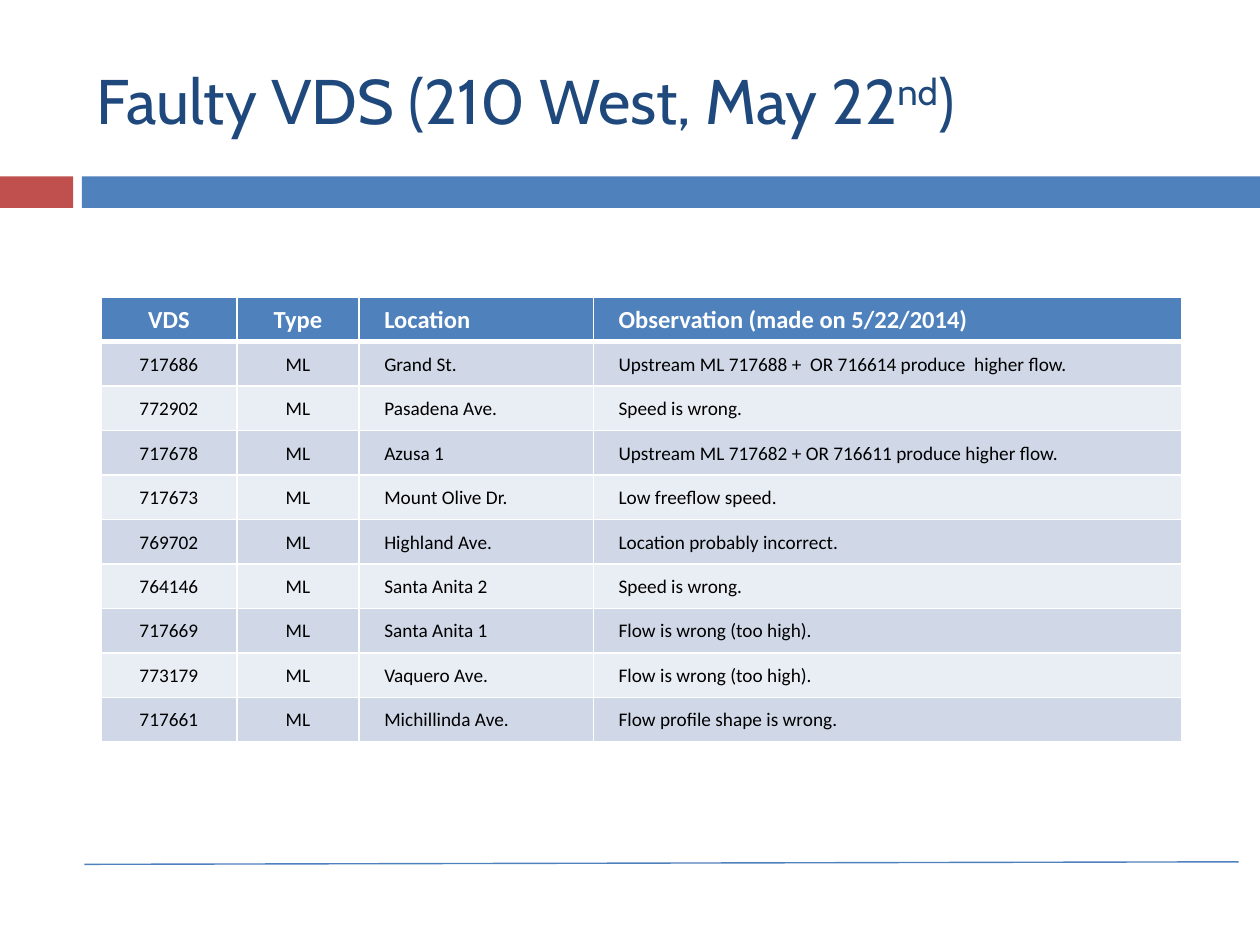
from lxml import etree
from pptx import Presentation
from pptx.dml.color import RGBColor
from pptx.enum.shapes import MSO_CONNECTOR, MSO_SHAPE
from pptx.enum.text import MSO_ANCHOR, PP_ALIGN
from pptx.oxml import parse_xml
from pptx.oxml.ns import qn
from pptx.util import Inches, Pt

RECTANGLE = MSO_SHAPE.RECTANGLE
STRAIGHT = MSO_CONNECTOR.STRAIGHT
MIDDLE = MSO_ANCHOR.MIDDLE
LEFT, CENTER = PP_ALIGN.LEFT, PP_ALIGN.CENTER
NAMESPACE = "http://schemas.openxmlformats.org/drawingml/2006/main"
BLUE, RED, NAVY, WHITE, BLACK = "4F81BD", "C0504D", "1F497D", "FFFFFF", "000000"
BANDS = ["E9EDF4", "D0D8E8"]
COLUMN_WIDTHS = [1.08, 0.97, 1.86, 4.67]
ROWS = [
    ("VDS", "Type", "Location", "Observation (made on 5/22/2014)"),
    ("717686", "ML", "Grand St.", "Upstream ML 717688 +  OR 716614 produce  higher flow."),
    ("772902", "ML", "Pasadena Ave.", "Speed is wrong."),
    ("717678", "ML", "Azusa 1", "Upstream ML 717682 + OR 716611 produce higher flow."),
    ("717673", "ML", "Mount Olive Dr.", "Low freeflow speed."),
    ("769702", "ML", "Highland Ave.", "Location probably incorrect."),
    ("764146", "ML", "Santa Anita 2", "Speed is wrong."),
    ("717669", "ML", "Santa Anita 1", "Flow is wrong (too high)."),
    ("773179", "ML", "Vaquero Ave.", "Flow is wrong (too high)."),
    ("717661", "ML", "Michillinda Ave.", "Flow profile shape is wrong."),
]


def color(value):
    return RGBColor.from_string(value)


def add_borders(cell, widths):
    properties = cell._tc.get_or_add_tcPr()
    for index, (side, points) in enumerate(widths.items()):
        border = parse_xml(
            f'<a:ln{side} xmlns:a="{NAMESPACE}" w="{Pt(points)}">'
            f'<a:solidFill><a:srgbClr val="{WHITE}"/></a:solidFill></a:ln{side}>'
        )
        properties.insert(index, border)


deck = Presentation()
deck.slide_width, deck.slide_height = Inches(10), Inches(7.5)
page = deck.slides.add_slide(deck.slide_layouts[6])

for left, width, fill in [(0, 0.58, RED), (0.65, 9.35, BLUE)]:
    bar = page.shapes.add_shape(RECTANGLE, Inches(left), Inches(1.4), Inches(width), Inches(0.25))
    bar.shadow.inherit = False
    bar.fill.solid()
    bar.fill.fore_color.rgb = color(fill)
    bar.line.fill.background()

footer_line = page.shapes.add_connector(
    STRAIGHT, Inches(0.67), Inches(6.86), Inches(9.83), Inches(6.84)
)
footer_line.line.color.rgb = color(BLUE)
footer_line.line.width = Pt(0.79)
etree.SubElement(footer_line._element.spPr, qn("a:effectLst"))

title = page.shapes.add_textbox(Inches(0.67), Inches(0.25), Inches(8.92), Inches(1.08))
title.text_frame.word_wrap = True
title.text_frame.vertical_anchor = MIDDLE
para = title.text_frame.paragraphs[0]
for text, baseline in [("Faulty VDS (210 West, May 22", 0), ("nd", 30000), (")", 0)]:
    span = para.add_run()
    span.text = text
    span.font.name = "Cabin"
    span.font.size = Pt(36)
    span.font.color.rgb = color(NAVY)
    if baseline:
        span.font._element.set("baseline", str(baseline))

table = page.shapes.add_table(
    len(ROWS), len(COLUMN_WIDTHS), Inches(0.8), Inches(2.36), Inches(8.58), Inches(3.53)
).table
for column, width in zip(table.columns, COLUMN_WIDTHS):
    column.width = Inches(width)

for row_index, values in enumerate(ROWS):
    table.rows[row_index].height = Inches(3.53 / len(ROWS))
    header = row_index == 0
    for column_index, text in enumerate(values):
        centered = column_index < 2
        cell = table.cell(row_index, column_index)
        cell.fill.solid()
        cell.fill.fore_color.rgb = color(BLUE if header else BANDS[row_index % 2])
        cell.vertical_anchor = MIDDLE
        cell.margin_left = cell.margin_right = Inches(0.01 if centered else 0.2)
        cell.margin_top, cell.margin_bottom = Inches(0.01), Inches(0)
        top = 3 if row_index == 1 else 1
        add_borders(cell, {"L": 1, "R": 1, "T": top, "B": 3 if header else 1})
        para = cell.text_frame.paragraphs[0]
        para.text = text
        para.alignment = CENTER if centered else LEFT
        font = para.runs[0].font
        font.name = "Calibri"
        font.size = Pt(14 if header else 11)
        font.bold = header
        font.color.rgb = color(WHITE if header else BLACK)

deck.save("out.pptx")
